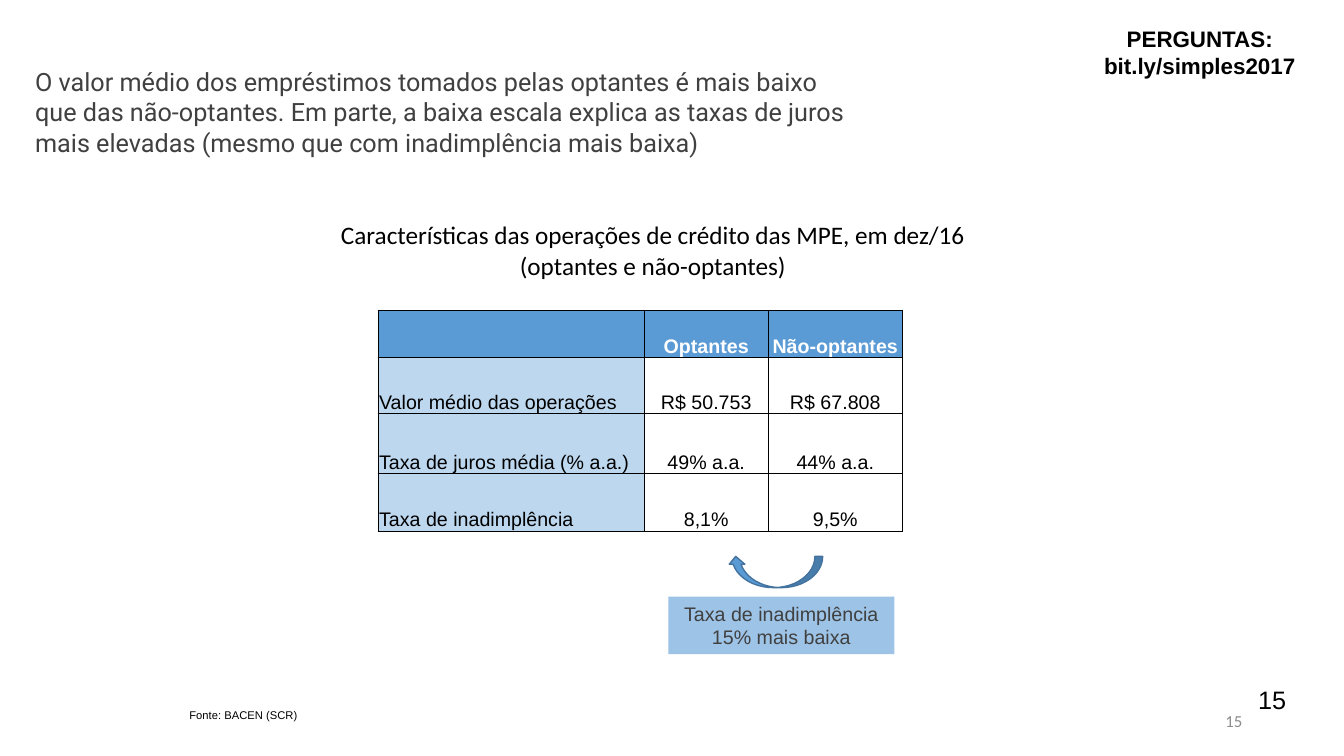
"""Build the slide comparing credit operations of optantes and não-optantes."""
from lxml.etree import SubElement
from pptx import Presentation
from pptx.dml.color import RGBColor
from pptx.enum.shapes import MSO_SHAPE as SHAPE
from pptx.enum.text import MSO_ANCHOR as ANCHOR, PP_ALIGN as ALIGN
from pptx.oxml.ns import qn
from pptx.util import Inches, Pt

BLACK = RGBColor(0x00, 0x00, 0x00)
WHITE = RGBColor(0xFF, 0xFF, 0xFF)
DARK_GRAY = RGBColor(0x40, 0x40, 0x40)
GRAY = RGBColor(0x8C, 0x8C, 0x8C)
BLUE = RGBColor(0x5B, 0x9B, 0xD5)
BLUE_OUTLINE = RGBColor(0x43, 0x73, 0x9E)
LIGHT_BLUE = RGBColor(0x9D, 0xC3, 0xE6)
PALE_BLUE = RGBColor(0xBD, 0xD7, 0xEE)

HEADLINE = (
    "O valor médio dos empréstimos tomados pelas optantes é mais baixo que das "
    "não-optantes. Em parte, a baixa escala explica as taxas de juros mais "
    "elevadas (mesmo que com inadimplência mais baixa)"
)
TABLE_TITLE = ["Características das operações de crédito das MPE, em dez/16",
               "(optantes e não-optantes)"]
TEXTS = [
    ((12.38, 6.74, 0.95, 0.4), ["15"], "Arial", 18, BLACK, ALIGN.LEFT, ANCHOR.TOP),
    ((0.25, 0.61, 8.27, 1.01), [HEADLINE], "Roboto", 18, DARK_GRAY, ALIGN.LEFT, ANCHOR.TOP),
    ((2.89, 2.13, 7.17, 0.71), TABLE_TITLE, "Calibri", 18, BLACK, ALIGN.CENTER, ANCHOR.TOP),
    ((1.78, 6.98, 5.2, 0.24), ["Fonte: BACEN (SCR)"], "Arial", 8, BLACK, ALIGN.LEFT, ANCHOR.TOP),
    ((9.42, 6.95, 3, 0.4), ["15"], "Calibri", 12, GRAY, ALIGN.RIGHT, ANCHOR.MIDDLE),
]
PANELS = [
    ((6.63, 5.92, 2.24, 0.57), ["Taxa de inadimplência 15% mais baixa"],
     14, DARK_GRAY, LIGHT_BLUE, False),
    ((10.68, 0.2, 2.44, 0.64), ["PERGUNTAS:", "bit.ly/simples2017"],
     16, BLACK, WHITE, True),
]
ARROW_BOX = (7.22, 5.52, 0.94, 0.31)
TABLE_LEFT, TABLE_TOP = 3.75, 3.08
COLUMN_WIDTHS = [2.64, 1.23, 1.33]
ROW_HEIGHTS = [0.47, 0.55, 0.6, 0.57]
ROWS = [
    ["", "Optantes", "Não-optantes"],
    ["Valor médio das operações", "R$ 50.753", "R$ 67.808"],
    ["Taxa de juros média (% a.a.)", "49% a.a.", "44% a.a."],
    ["Taxa de inadimplência", "8,1%", "9,5%"],
]


def place(box):
    return [Inches(value) for value in box]


def style(paragraph, font_name, size, color, align, bold=False):
    paragraph.alignment = align
    font = paragraph.font
    font.name, font.size, font.bold = font_name, Pt(size), bold
    font.color.rgb = color


def write(shape, lines, font_name, size, color, align, anchor, bold=False):
    frame = shape.text_frame
    frame.word_wrap = True
    frame.vertical_anchor = anchor
    frame.text = "\n".join(lines)
    for paragraph in frame.paragraphs:
        style(paragraph, font_name, size, color, align, bold)


def add_filled(slide, kind, box, fill):
    shape = slide.shapes.add_shape(kind, *place(box))
    shape.shadow.inherit = False
    shape.fill.solid()
    shape.fill.fore_color.rgb = fill
    shape.line.fill.background()
    return shape


def add_borders(cell):
    properties = cell._tc.get_or_add_tcPr()
    for side in ("a:lnL", "a:lnR", "a:lnT", "a:lnB"):
        border = SubElement(properties, qn(side), w=str(Pt(1)))
        fill = SubElement(border, qn("a:solidFill"))
        SubElement(fill, qn("a:srgbClr"), val=str(BLACK))


def fill_cell(cell, text, row, column):
    add_borders(cell)
    if row == 0 or column == 0:
        cell.fill.solid()
        cell.fill.fore_color.rgb = BLUE if row == 0 else PALE_BLUE
    else:
        cell.fill.background()
    cell.vertical_anchor = ANCHOR.BOTTOM
    cell.margin_left = cell.margin_right = cell.margin_top = Inches(0.01)
    cell.margin_bottom = 0
    cell.text = text
    paragraph = cell.text_frame.paragraphs[0]
    style(paragraph, "Arial", 14, WHITE if row == 0 else BLACK,
          ALIGN.LEFT if column == 0 else ALIGN.CENTER, row == 0)
    if row == 0:
        paragraph.space_after = Pt(6)


def add_credit_table(slide):
    box = (TABLE_LEFT, TABLE_TOP, sum(COLUMN_WIDTHS), sum(ROW_HEIGHTS))
    table = slide.shapes.add_table(len(ROWS), len(COLUMN_WIDTHS), *place(box)).table
    for column, width in zip(table.columns, COLUMN_WIDTHS):
        column.width = Inches(width)
    for row, height in zip(table.rows, ROW_HEIGHTS):
        row.height = Inches(height)
    for row, values in enumerate(ROWS):
        for column, text in enumerate(values):
            fill_cell(table.cell(row, column), text, row, column)


def main():
    presentation = Presentation()
    presentation.slide_width = Inches(13.33)
    presentation.slide_height = Inches(7.5)
    slide = presentation.slides.add_slide(presentation.slide_layouts[6])

    for box, lines, *look in TEXTS:
        write(slide.shapes.add_textbox(*place(box)), lines, *look)

    add_credit_table(slide)

    arrow = add_filled(slide, SHAPE.CURVED_UP_ARROW, ARROW_BOX, BLUE)
    arrow.line.color.rgb = BLUE_OUTLINE
    arrow.line.width = Pt(1)
    arrow._element.spPr.get_or_add_xfrm().set("flipH", "1")

    for box, lines, size, color, fill, bold in PANELS:
        panel = add_filled(slide, SHAPE.RECTANGLE, box, fill)
        write(panel, lines, "Arial", size, color, ALIGN.CENTER, ANCHOR.TOP, bold)

    presentation.save("out.pptx")


if __name__ == "__main__":
    main()
